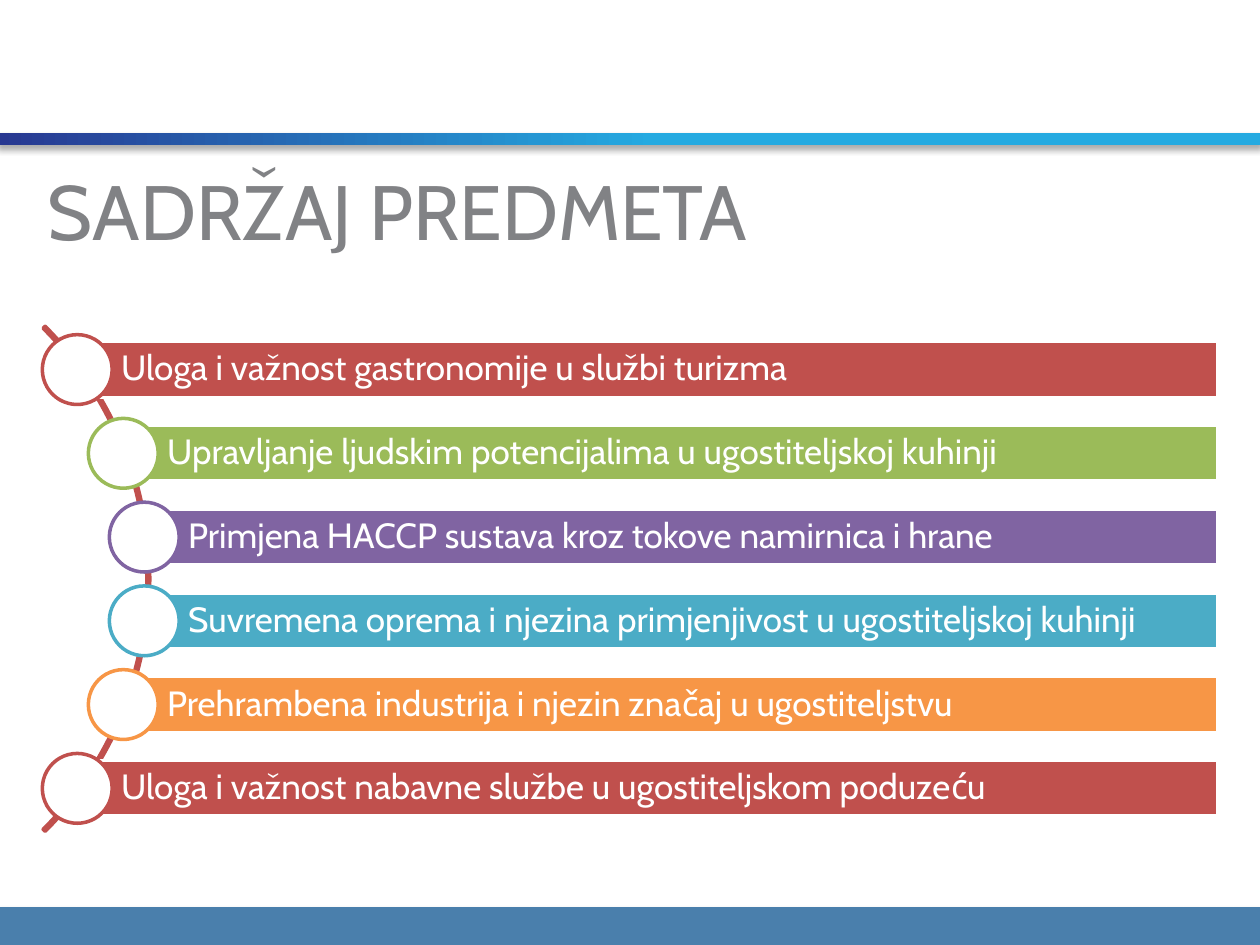
from typing import Any, NamedTuple

from pptx import Presentation
from pptx.dml.color import RGBColor as Rgb
from pptx.enum.shapes import MSO_SHAPE as Preset
from pptx.enum.text import MSO_ANCHOR as Anchor, PP_ALIGN as Align
from pptx.oxml import parse_xml
from pptx.oxml.ns import nsdecls
from pptx.util import Pt

COLORS = {
    "white": "FFFFFF",
    "title": "818285",
    "footer": "4A7FAC",
    "navy": "283891",
    "sky": "25AAE1",
    "red": "C0504D",
    "green": "9BBB59",
    "purple": "8064A2",
    "teal": "4BACC6",
    "orange": "F79646",
}


class Box(NamedTuple):
    left: float
    top: float
    width: float
    height: float


class Topic(NamedTuple):
    wording: str
    color: str
    circle_left: float


TOPICS = [
    Topic("Uloga i važnost gastronomije u službi turizma", "red", 24.2),
    Topic("Upravljanje ljudskim potencijalima u ugostiteljskoj kuhinji", "green", 50.5),
    Topic("Primjena HACCP sustava kroz tokove namirnica i hrane", "purple", 62.5),
    Topic("Suvremena oprema i njezina primjenjivost u ugostiteljskoj kuhinji", "teal", 62.5),
    Topic("Prehrambena industrija i njezin značaj u ugostiteljstvu", "orange", 50.5),
    Topic("Uloga i važnost nabavne službe u ugostiteljskom poduzeću", "red", 24.2),
]

FIRST_CENTER = 211.2
PITCH = 47.86
CIRCLE_SIZE = 39.9
BAR_HEIGHT = 31.9
BAR_RIGHT = 695.7
TITLE_FONT = {"name": "Cabin", "size": Pt(44), "bold": False}
TOPIC_FONT = {"name": "Cabin", "size": Pt(20)}
TOPIC_FRAME = {
    "word_wrap": True,
    "vertical_anchor": Anchor.MIDDLE,
    "margin_left": Pt(25.1),
    "margin_top": Pt(4),
    "margin_right": Pt(4),
    "margin_bottom": Pt(4),
}


def rgb(color: str) -> Rgb:
    return Rgb.from_string(COLORS[color])


def apply_format(target: Any, values: dict[str, Any]) -> None:
    for attribute, value in values.items():
        setattr(target, attribute, value)


def place(target: Any, box: Box) -> None:
    apply_format(target, {side: Pt(length) for side, length in box._asdict().items()})


def draw(slide: Any, preset: Preset, box: Box, fill: str | None, line: str | None) -> Any:
    shape = slide.shapes.add_shape(preset, *map(Pt, box))
    shape.shadow.inherit = False
    if fill:
        shape.fill.solid()
        shape.fill.fore_color.rgb = rgb(fill)
    else:
        shape.fill.background()
    if line:
        shape.line.color.rgb = rgb(line)
        shape.line.width = Pt(2)
    else:
        shape.line.fill.background()
    return shape


def draw_band(slide: Any, box: Box, fill: str) -> Any:
    band = draw(slide, Preset.RECTANGLE, box, fill, None)
    effects = band._element.spPr.find("{*}effectLst")
    effects.append(parse_xml(
        f'<a:outerShdw {nsdecls("a")} blurRad="{Pt(3.5)}" dist="{Pt(2.2)}" '
        'dir="5400000" rotWithShape="0"><a:srgbClr val="000000">'
        '<a:alpha val="32000"/></a:srgbClr></a:outerShdw>'
    ))
    return band


def draw_header(slide: Any) -> None:
    header = draw_band(slide, Box(-1.4, 75.8, 722.4, 7.2), "navy")
    header.fill.gradient()
    header.fill.gradient_angle = 0
    stops = zip(header.fill.gradient_stops, [(0, "navy"), (0.52, "sky")])
    for stop, (position, color) in stops:
        stop.position = position
        stop.color.rgb = rgb(color)


def write_title(slide: Any, wording: str) -> None:
    title = slide.shapes.title
    place(title, Box(20.2, 88.6, 680.4, 62.6))
    title.text_frame.text = wording
    title.text_frame.vertical_anchor = Anchor.MIDDLE
    heading = title.text_frame.paragraphs[0]
    heading.alignment = Align.LEFT
    apply_format(heading.font, TITLE_FONT)
    heading.font.color.rgb = rgb("title")


def draw_arc(slide: Any) -> None:
    arc = draw(slide, Preset.BLOCK_ARC, Box(-322.6, 126.7, 408.2, 408.2), None, "red")
    for index, value in enumerate((189, 27, 0.004)):
        arc.adjustments[index] = value


def draw_topic(slide: Any, topic: Topic, center: float) -> None:
    bar_left = topic.circle_left + CIRCLE_SIZE / 2
    bar_box = Box(bar_left, center - BAR_HEIGHT / 2, BAR_RIGHT - bar_left, BAR_HEIGHT)
    bar = draw(slide, Preset.RECTANGLE, bar_box, topic.color, "white")
    apply_format(bar.text_frame, TOPIC_FRAME)
    label = bar.text_frame.paragraphs[0]
    label.text = topic.wording
    apply_format(label, {"alignment": Align.LEFT, "line_spacing": 0.9})
    apply_format(label.font, TOPIC_FONT)
    label.font.color.rgb = rgb("white")
    circle_box = Box(topic.circle_left, center - CIRCLE_SIZE / 2, CIRCLE_SIZE, CIRCLE_SIZE)
    draw(slide, Preset.OVAL, circle_box, "white", topic.color)


def main() -> None:
    deck = Presentation()
    apply_format(deck, {"slide_width": Pt(720), "slide_height": Pt(540)})
    slide = deck.slides.add_slide(deck.slide_layouts[5])
    draw_band(slide, Box(-1.4, 518.4, 722.2, 21.6), "footer")
    draw_header(slide)
    write_title(slide, "SADRŽAJ PREDMETA")
    draw_arc(slide)
    for row, topic in enumerate(TOPICS):
        draw_topic(slide, topic, FIRST_CENTER + row * PITCH)
    deck.save("out.pptx")


if __name__ == "__main__":
    main()
